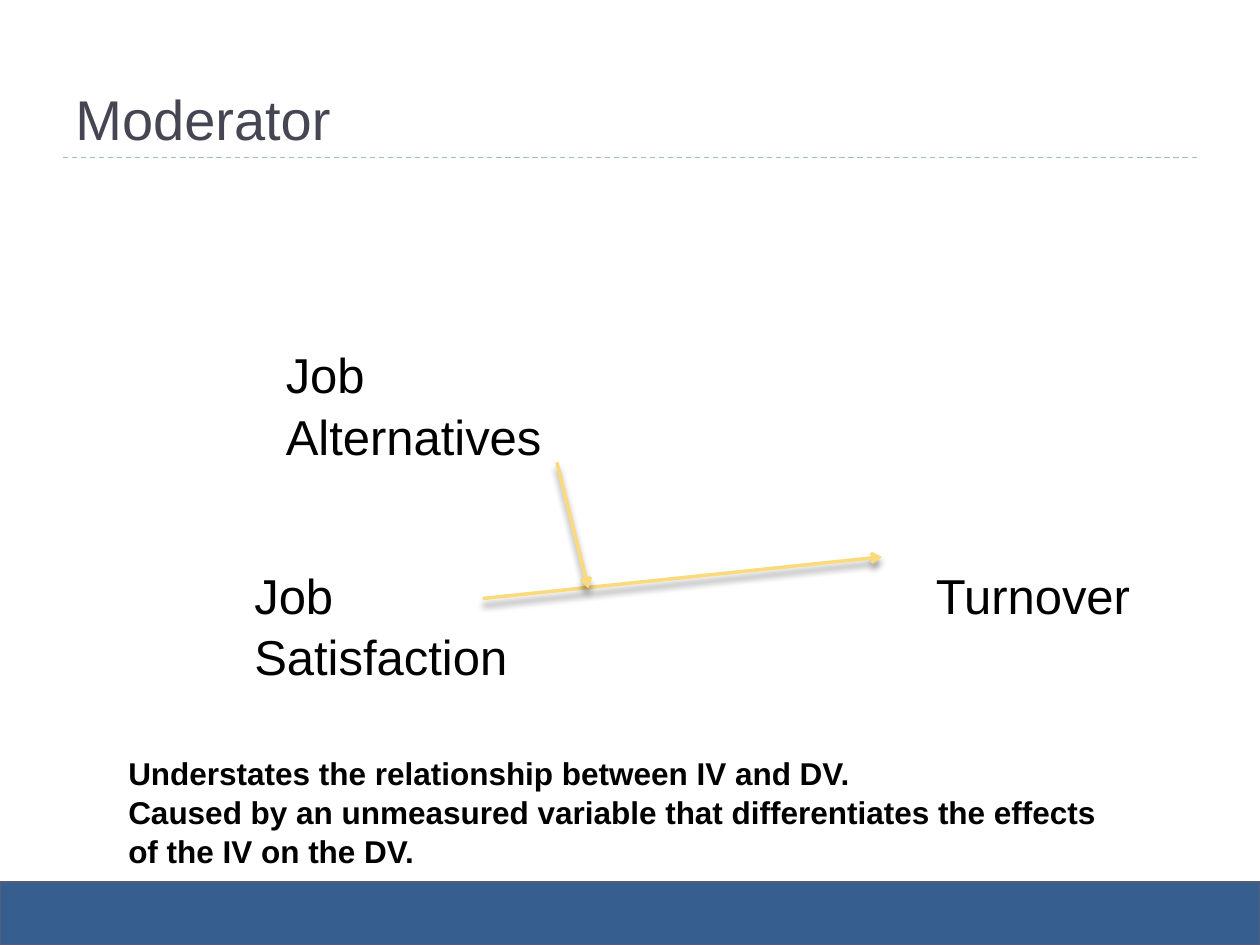
import pptx
import pptx.util
import pptx.dml.color
import pptx.enum.dml
import pptx.enum.shapes
import pptx.enum.text
import pptx.oxml
import pptx.oxml.ns

Inches, Pt = pptx.util.Inches, pptx.util.Pt
FONT = "Arial"
BLACK, SLATE, GOLD = "000000", "464653", "FADA7A"
ANCHOR = pptx.enum.text.MSO_ANCHOR

TITLE = ("Moderator", (0.5, 0.17, 9, 1.08))
LABELS = [
    ("Turnover", (7.33, 4.42, 2.08, 0.57)),
    ("Job Alternatives", (2.17, 2.67, 2.83, 1.04)),
    ("Job Satisfaction", (1.92, 4.42, 2.58, 1.04)),
]
ARROWS = [
    ((3.83, 4.75), (7, 4.42)),
    ((4.42, 3.67), (4.67, 4.67)),
]
NOTES = [
    "Understates the relationship between IV and DV.",
    "Caused by an unmeasured variable that differentiates the effects of the IV on the DV.",
]
NOTE_BOX = (0.92, 5.92, 8.17, 1.01)

NS = pptx.oxml.ns.nsdecls("a")
NO_GLOW = f"<a:effectLst {NS}/>"
SHADOW = (
    f'<a:effectLst {NS}><a:outerShdw blurRad="{Pt(4)}" dist="{Pt(3.4)}" dir="5400000" '
    f'rotWithShape="0"><a:srgbClr val="{BLACK}"><a:alpha val="40000"/></a:srgbClr>'
    "</a:outerShdw></a:effectLst>"
)
HEAD = f'<a:tailEnd {NS} type="arrow"/>'


def rgb(code):
    return pptx.dml.color.RGBColor.from_string(code)


def write(slide, lines, box, size, color=BLACK, bold=False, anchor=ANCHOR.TOP, space=1.04):
    frame = slide.shapes.add_textbox(*map(Inches, box)).text_frame
    frame.word_wrap = True
    frame.vertical_anchor = anchor
    for i, line in enumerate(lines):
        para = frame.paragraphs[0] if i == 0 else frame.add_paragraph()
        para.line_spacing = space
        run = para.add_run()
        run.text = line
        font = run.font
        font.name, font.size, font.bold = FONT, Pt(size), bold
        font.color.rgb = rgb(color)


def draw(slide, start, end, color, width, effect):
    kind = pptx.enum.shapes.MSO_CONNECTOR.STRAIGHT
    line = slide.shapes.add_connector(kind, *map(Inches, start + end))
    line.line.color.rgb = rgb(color)
    line.line.width = Pt(width)
    line._element.spPr.append(pptx.oxml.parse_xml(effect))
    return line


def main():
    deck = pptx.Presentation()
    deck.slide_width, deck.slide_height = Inches(10), Inches(7.5)
    slide = deck.slides.add_slide(deck.slide_layouts[6])

    rule = draw(slide, (0.5, 1.25), (9.5, 1.25), "9FB8CD", 0.75, NO_GLOW)
    rule.line.dash_style = pptx.enum.dml.MSO_LINE.DASH

    rect = pptx.enum.shapes.MSO_SHAPE.RECTANGLE
    band = slide.shapes.add_shape(rect, *map(Inches, (0, 7, 10, 0.5)))
    band.shadow.inherit = False
    band.fill.solid()
    band.fill.fore_color.rgb = rgb("365E8F")
    band.line.color.rgb = rgb("545C79")
    band.line.width = Pt(1.5)

    text, box = TITLE
    write(slide, [text], box, 32, SLATE, anchor=ANCHOR.BOTTOM, space=1)
    for text, box in LABELS:
        write(slide, [text], box, 28)
    for start, end in ARROWS:
        arrow = draw(slide, start, end, GOLD, 2, SHADOW)
        arrow.line._get_or_add_ln().append(pptx.oxml.parse_xml(HEAD))
    write(slide, NOTES, NOTE_BOX, 18, bold=True)

    deck.save("out.pptx")


if __name__ == "__main__":
    main()
